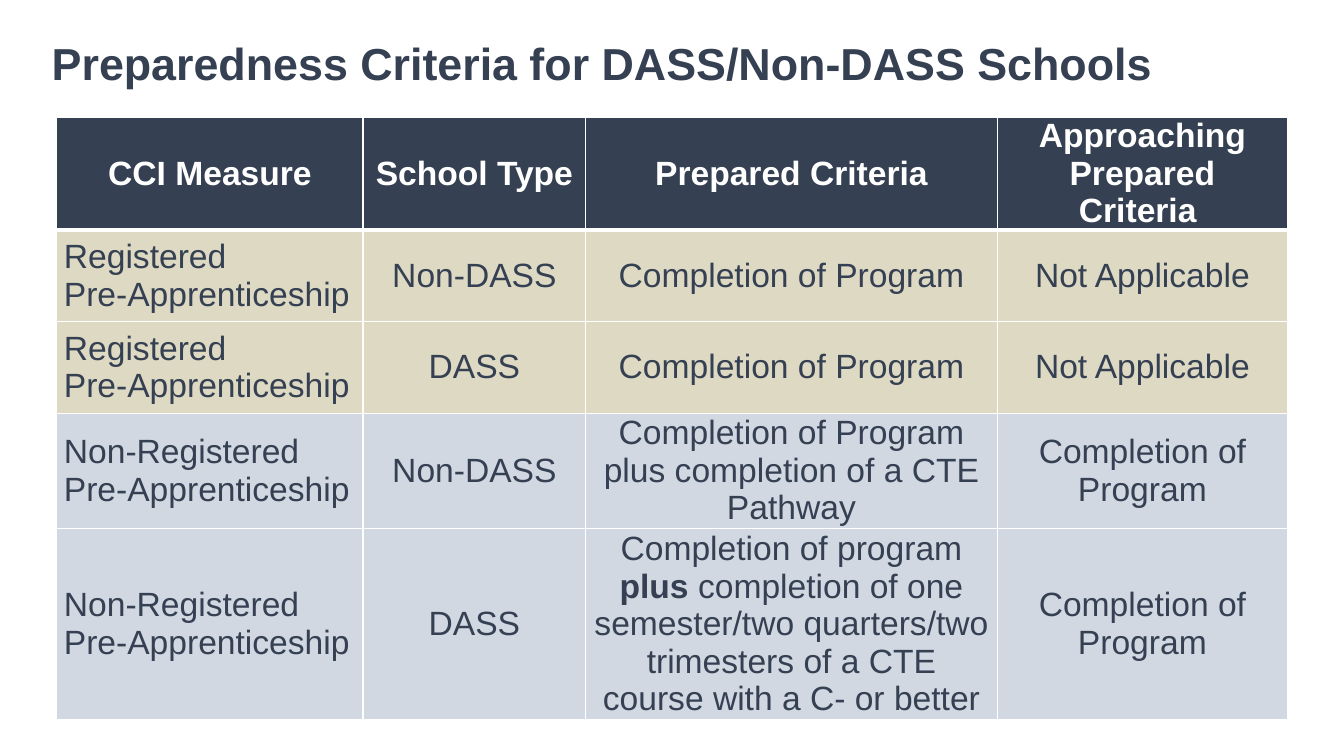
from dataclasses import dataclass
from lxml.etree import SubElement as Sub
from pptx import Presentation
from pptx.dml.color import RGBColor as RGB
from pptx.enum.text import MSO_ANCHOR as Anchor, MSO_AUTO_SIZE as Fit, PP_ALIGN as Align
from pptx.oxml import parse_xml
from pptx.oxml.ns import nsdecls, qn
from pptx.util import Cm, Pt


@dataclass
class Theme:
    face: str = "Arial"
    navy: str = "354052"
    white: str = "FFFFFF"
    sand: str = "DDD9C3"
    mist: str = "D1D8E2"
    head: int = 32
    body: int = 24
    thin: int = 1
    thick: int = 3


theme = Theme()


def style(run, size, color, bold):
    font = run.font
    font.name = theme.face
    font.size = Pt(size)
    font.bold = bold
    font.color.rgb = RGB.from_string(color)


def edge(side, width):
    line = parse_xml(f'<a:ln{side} {nsdecls("a")} w="{Pt(width)}"/>')
    fill = Sub(line, qn("a:solidFill"))
    Sub(fill, qn("a:srgbClr"), val=theme.white)
    return line


deck = Presentation()
deck.slide_width = Cm(33.87)
deck.slide_height = Cm(19.05)
slide = deck.slides.add_slide(deck.slide_layouts[5])

title = slide.shapes.title
title.left, title.top = Cm(1.05), Cm(0.23)
title.width, title.height = Cm(32.2), Cm(2.72)
frame = title.text_frame
frame.text = "Preparedness Criteria for DASS/Non-DASS Schools"
frame.auto_size = Fit.NONE
frame.word_wrap = True
frame.vertical_anchor = Anchor.MIDDLE
frame.paragraphs[0].alignment = Align.LEFT
style(frame.paragraphs[0].runs[0], theme.head, theme.navy, True)

hard = chr(160)
reg = "Registered\nPre-Apprenticeship"
done = "Completion of Program"
none = "Not Applicable"
rows = [
    ["CCI Measure", "School Type", "Prepared Criteria", "Approaching Prepared Criteria" + hard],
    [reg, "Non-DASS", done, none],
    [reg, "DASS", done, none],
    ["Non-" + reg, "Non-DASS", done + " plus completion of a CTE Pathway", done],
    ["Non-" + reg, "DASS",
     "Completion of program *plus* completion of one semester/two quarters/two "
     "trimesters of a CTE course with a C- or better", done],
]
fills = [theme.navy, theme.sand, theme.sand, theme.mist, theme.mist]
widths = [7.72, 5.61, 10.37, 7.32]
heights = [2.84, 2.31, 2.31, 2.9, 4.83]

table = slide.shapes.add_table(
    len(rows), len(widths), Cm(1.43), Cm(2.95), Cm(sum(widths)), Cm(sum(heights))
).table
table.horz_banding = False
for col, width in zip(table.columns, widths):
    col.width = Cm(width)
for row, height in zip(table.rows, heights):
    row.height = Cm(height)

for r, row in enumerate(rows):
    for c, text in enumerate(row):
        cell = table.cell(r, c)
        cell.fill.solid()
        cell.fill.fore_color.rgb = RGB.from_string(fills[r])
        cell.vertical_anchor = Anchor.MIDDLE
        cell.margin_left = cell.margin_right = Cm(0.18)
        cell.margin_top = cell.margin_bottom = 0
        top = theme.thick if r == 1 else theme.thin
        base = theme.thick if r == 0 else theme.thin
        sides = {"L": theme.thin, "R": theme.thin, "T": top, "B": base}
        props = cell._tc.get_or_add_tcPr()
        for i, (side, width) in enumerate(sides.items()):
            props.insert(i, edge(side, width))

        cell.text_frame.text = text.split("*")[0]
        for part in text.split("*")[1:]:
            cell.text_frame.paragraphs[0].add_run().text = part
        color = theme.white if r == 0 else theme.navy
        for para in cell.text_frame.paragraphs:
            para.alignment = Align.LEFT if r and c == 0 else Align.CENTER
            for i, run in enumerate(para.runs):
                style(run, theme.body, color, r == 0 or i == 1)

deck.save("out.pptx")
